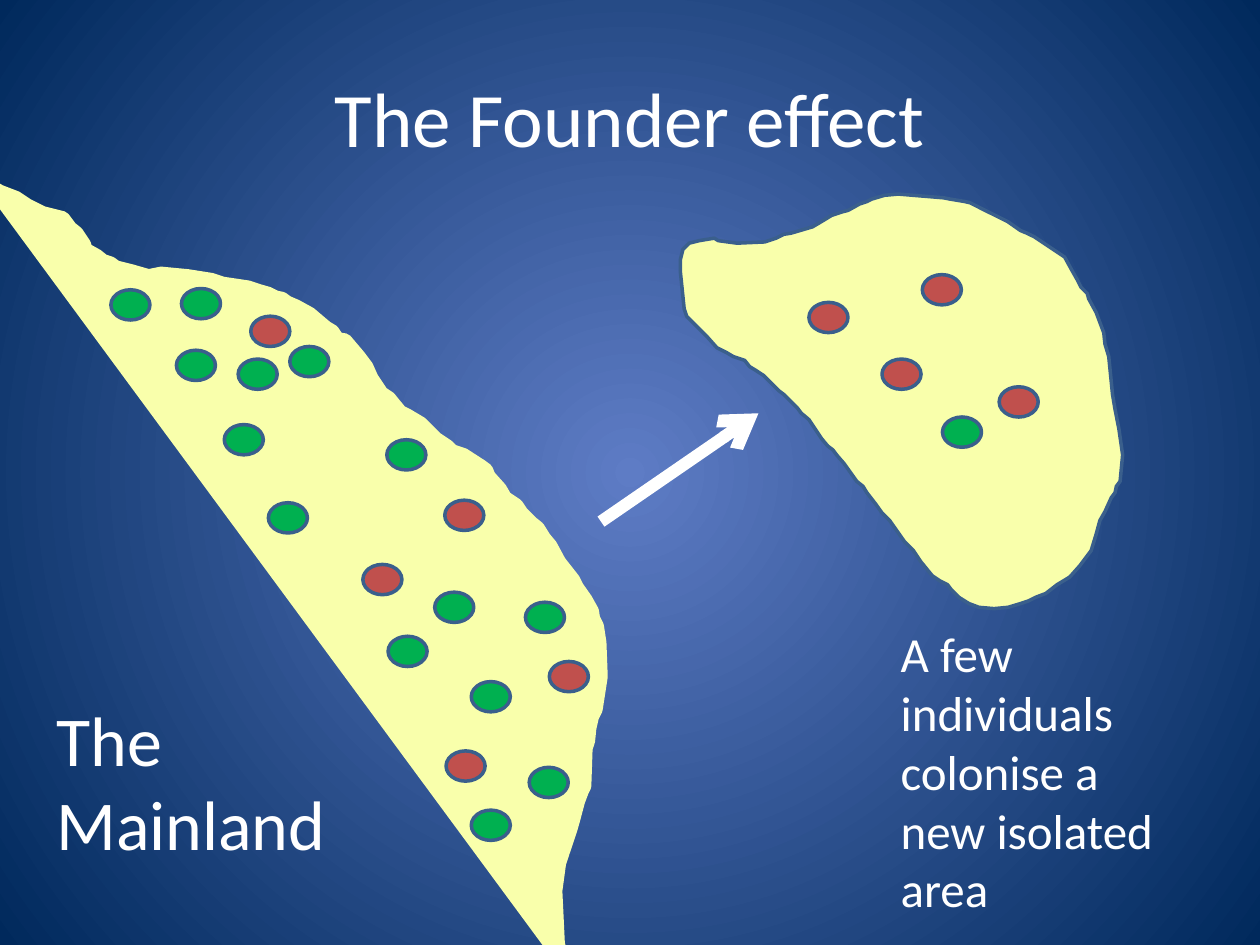
from typing import NamedTuple

from lxml import etree
from pptx import Presentation
from pptx.dml.color import RGBColor
from pptx.enum.shapes import MSO_CONNECTOR, MSO_SHAPE
from pptx.enum.text import MSO_ANCHOR, MSO_AUTO_SIZE, PP_ALIGN
from pptx.oxml.ns import qn
from pptx.util import Inches, Pt

OVAL = MSO_SHAPE.OVAL
STRAIGHT = MSO_CONNECTOR.STRAIGHT
LEFT, CENTER = PP_ALIGN.LEFT, PP_ALIGN.CENTER
TOP, MIDDLE = MSO_ANCHOR.TOP, MSO_ANCHOR.MIDDLE
FIT, FIXED = MSO_AUTO_SIZE.SHAPE_TO_FIT_TEXT, MSO_AUTO_SIZE.NONE

WHITE, SAND, OUTLINE = "FFFFFF", "F9FFAB", "3A5F8C"
GREEN, RED = "00B050", "C0504D"
BG_CENTER, BG_EDGE = "5E7CC5", "00295C"
DOT_W, DOT_H = 0.31, 0.24

Point = tuple[float, float]


class Label(NamedTuple):
    text: str
    box: tuple[float, float, float, float]
    size: int
    align: PP_ALIGN = LEFT
    anchor: MSO_ANCHOR = TOP
    auto_size: MSO_AUTO_SIZE = FIT


class Land(NamedTuple):
    coast: list[Point]
    closed: bool
    line_color: str
    line_width: float
    individuals: dict[str, list[Point]]


LABELS = [
    Label("The Founder effect", (0.5, 0.3, 9, 1.25), 44, CENTER, MIDDLE, FIXED),
    Label("The Mainland", (0.35, 5.48, 2.44, 1.45), 40),
    Label("A few individuals colonise a new isolated area", (7.05, 4.9, 2.44, 2.46), 28),
]

MAINLAND = Land(
    coast=[
        (-0.2, 1.39), (-0.12, 1.43), (-0.09, 1.48), (-0.05, 1.49), (0, 1.52), (0.13, 1.57),
        (0.22, 1.63), (0.34, 1.69), (0.5, 1.73), (0.56, 1.81), (0.61, 1.85), (0.67, 1.94),
        (0.68, 1.98), (0.77, 2.03), (0.82, 2.07), (0.88, 2.09), (0.92, 2.12), (1.04, 2.15),
        (1.18, 2.19), (1.28, 2.17), (1.49, 2.19), (1.68, 2.22), (1.77, 2.25), (1.97, 2.28),
        (2.06, 2.31), (2.13, 2.33), (2.19, 2.36), (2.24, 2.37), (2.28, 2.4), (2.35, 2.43),
        (2.46, 2.49), (2.59, 2.6), (2.64, 2.63), (2.68, 2.69), (2.74, 2.7), (2.85, 2.83),
        (2.91, 2.91), (2.95, 3), (3.03, 3.12), (3.09, 3.16), (3.13, 3.21), (3.18, 3.27),
        (3.24, 3.3), (3.34, 3.36), (3.41, 3.43), (3.46, 3.48), (3.55, 3.54), (3.59, 3.58),
        (3.68, 3.61), (3.82, 3.7), (3.86, 3.73), (3.88, 3.78), (3.97, 3.88), (4.01, 3.95),
        (4.1, 4.01), (4.14, 4.07), (4.22, 4.15), (4.27, 4.19), (4.32, 4.27), (4.37, 4.33),
        (4.44, 4.46), (4.55, 4.6), (4.58, 4.66), (4.65, 4.76), (4.7, 4.85), (4.71, 4.91),
        (4.74, 4.97), (4.76, 5.1), (4.77, 5.37), (4.73, 5.63), (4.7, 5.69), (4.68, 5.78),
        (4.67, 5.88), (4.65, 5.94), (4.64, 6.24), (4.62, 6.28), (4.59, 6.36), (4.55, 6.51),
        (4.53, 6.58), (4.49, 6.7), (4.47, 6.76), (4.44, 6.85), (4.41, 7.07), (4.43, 7.49),
        (4.47, 7.64), (4.52, 7.79),
    ],
    closed=False,
    line_color=SAND,
    line_width=7.75,
    individuals={
        GREEN: [
            (0.88, 2.3), (1.44, 2.29), (1.4, 2.78), (1.89, 2.85), (1.78, 3.37), (2.3, 2.75),
            (2.13, 3.99), (3.07, 3.49), (3.74, 5.41), (3.45, 4.7), (3.08, 5.05), (4.17, 4.78),
            (4.2, 6.09), (3.74, 6.43),
        ],
        RED: [(3.53, 3.97), (2.88, 4.48), (4.36, 5.25), (1.99, 2.51), (3.54, 5.96)],
    },
)

ISLAND = Land(
    coast=[
        (5.7, 1.91), (5.85, 1.93), (6.07, 1.92), (6.16, 1.89), (6.22, 1.86), (6.28, 1.85),
        (6.45, 1.8), (6.55, 1.74), (6.6, 1.71), (6.69, 1.68), (6.73, 1.67), (6.82, 1.62),
        (6.88, 1.6), (6.92, 1.58), (7.02, 1.55), (7.13, 1.54), (7.49, 1.57), (7.54, 1.58),
        (7.66, 1.6), (7.7, 1.61), (7.82, 1.67), (7.94, 1.73), (8, 1.76), (8.1, 1.83),
        (8.15, 1.85), (8.21, 1.88), (8.3, 1.94), (8.45, 2.04), (8.51, 2.15), (8.55, 2.22),
        (8.58, 2.28), (8.63, 2.33), (8.64, 2.37), (8.7, 2.48), (8.76, 2.64), (8.77, 2.73),
        (8.8, 2.83), (8.83, 3.13), (8.85, 3.25), (8.88, 3.4), (8.91, 3.61), (8.89, 3.82),
        (8.86, 3.86), (8.85, 3.91), (8.82, 3.95), (8.77, 4.06), (8.73, 4.13), (8.7, 4.24),
        (8.66, 4.37), (8.57, 4.49), (8.49, 4.58), (8.39, 4.64), (8.3, 4.71), (8.22, 4.74),
        (8.16, 4.77), (8.1, 4.79), (8, 4.82), (7.89, 4.83), (7.77, 4.82), (7.69, 4.79),
        (7.61, 4.74), (7.55, 4.68), (7.52, 4.64), (7.46, 4.61), (7.4, 4.57), (7.31, 4.46),
        (7.25, 4.37), (7.18, 4.3), (7.06, 4.13), (7, 4.07), (6.95, 4), (6.88, 3.91),
        (6.85, 3.86), (6.8, 3.82), (6.7, 3.68), (6.64, 3.61), (6.61, 3.57), (6.57, 3.54),
        (6.52, 3.48), (6.46, 3.39), (6.42, 3.33), (6.36, 3.28), (6.33, 3.24), (6.22, 3.13),
        (6.18, 3.1), (6.06, 2.98), (6, 2.94), (5.95, 2.91), (5.91, 2.86), (5.82, 2.83),
        (5.77, 2.8), (5.69, 2.76), (5.61, 2.67), (5.52, 2.58), (5.45, 2.51), (5.43, 2.45),
        (5.4, 2.16), (5.4, 2.06), (5.42, 1.98), (5.47, 1.93), (5.55, 1.91), (5.67, 1.89),
    ],
    closed=True,
    line_color=OUTLINE,
    line_width=2,
    individuals={
        RED: [(6.42, 2.4), (7.93, 3.07), (7.32, 2.18), (7, 2.85)],
        GREEN: [(7.48, 3.31)],
    },
)


def rgb(value: str) -> RGBColor:
    return RGBColor.from_string(value)


def set_background(s) -> None:
    """Fill the slide with a gradient running outwards from its centre."""
    fill = s.background.fill
    fill.gradient()
    for stop, color, position in zip(fill.gradient_stops, (BG_CENTER, BG_EDGE), (0, 1)):
        stop.color.rgb = rgb(color)
        stop.position = position
    grad = s._element.find(f".//{qn('a:gradFill')}")
    lin = grad.find(qn("a:lin"))
    circle = etree.Element(qn("a:path"), path="circle")
    etree.SubElement(circle, qn("a:fillToRect"), dict.fromkeys("ltrb", "50000"))
    grad.replace(lin, circle)


def add_label(s, label: Label) -> None:
    tf = s.shapes.add_textbox(*map(Inches, label.box)).text_frame
    frame_format = {
        "word_wrap": True,
        "auto_size": label.auto_size,
        "vertical_anchor": label.anchor,
    }
    for name, value in frame_format.items():
        setattr(tf, name, value)
    p = tf.paragraphs[0]
    p.alignment = label.align
    r = p.add_run()
    r.text = label.text
    for name, value in {"name": "Calibri", "size": Pt(label.size)}.items():
        setattr(r.font, name, value)
    r.font.color.rgb = rgb(WHITE)


def paint(sp, fill: str, line: str, width: float) -> None:
    sp.shadow.inherit = False
    sp.fill.solid()
    sp.fill.fore_color.rgb = rgb(fill)
    sp.line.color.rgb = rgb(line)
    sp.line.width = Pt(width)


def add_land(s, land: Land) -> None:
    """Group a land mass with the individuals living on it."""
    shapes = s.shapes.add_group_shape().shapes
    start, *rest = [(Inches(x), Inches(y)) for x, y in land.coast]
    builder = shapes.build_freeform(*start)
    builder.add_line_segments(rest, close=land.closed)
    paint(builder.convert_to_shape(), SAND, land.line_color, land.line_width)
    for color, places in land.individuals.items():
        for x, y in places:
            dot = shapes.add_shape(OVAL, Inches(x), Inches(y), Inches(DOT_W), Inches(DOT_H))
            paint(dot, color, OUTLINE, 2)


def add_arrow(s, start: Point, end: Point) -> None:
    arrow = s.shapes.add_connector(STRAIGHT, *map(Inches, (*start, *end)))
    arrow.line.color.rgb = rgb(WHITE)
    arrow.line.width = Pt(7)
    etree.SubElement(arrow.line._get_or_add_ln(), qn("a:tailEnd"), type="arrow")
    etree.SubElement(arrow._element.spPr, qn("a:effectLst"))


def main() -> None:
    prs = Presentation()
    prs.slide_width, prs.slide_height = Inches(10), Inches(7.5)
    s = prs.slides.add_slide(prs.slide_layouts[6])
    set_background(s)
    for label in LABELS:
        add_label(s, label)
    add_land(s, MAINLAND)
    add_arrow(s, (4.77, 4.14), (6.02, 3.28))
    add_land(s, ISLAND)
    prs.save("out.pptx")


if __name__ == "__main__":
    main()
